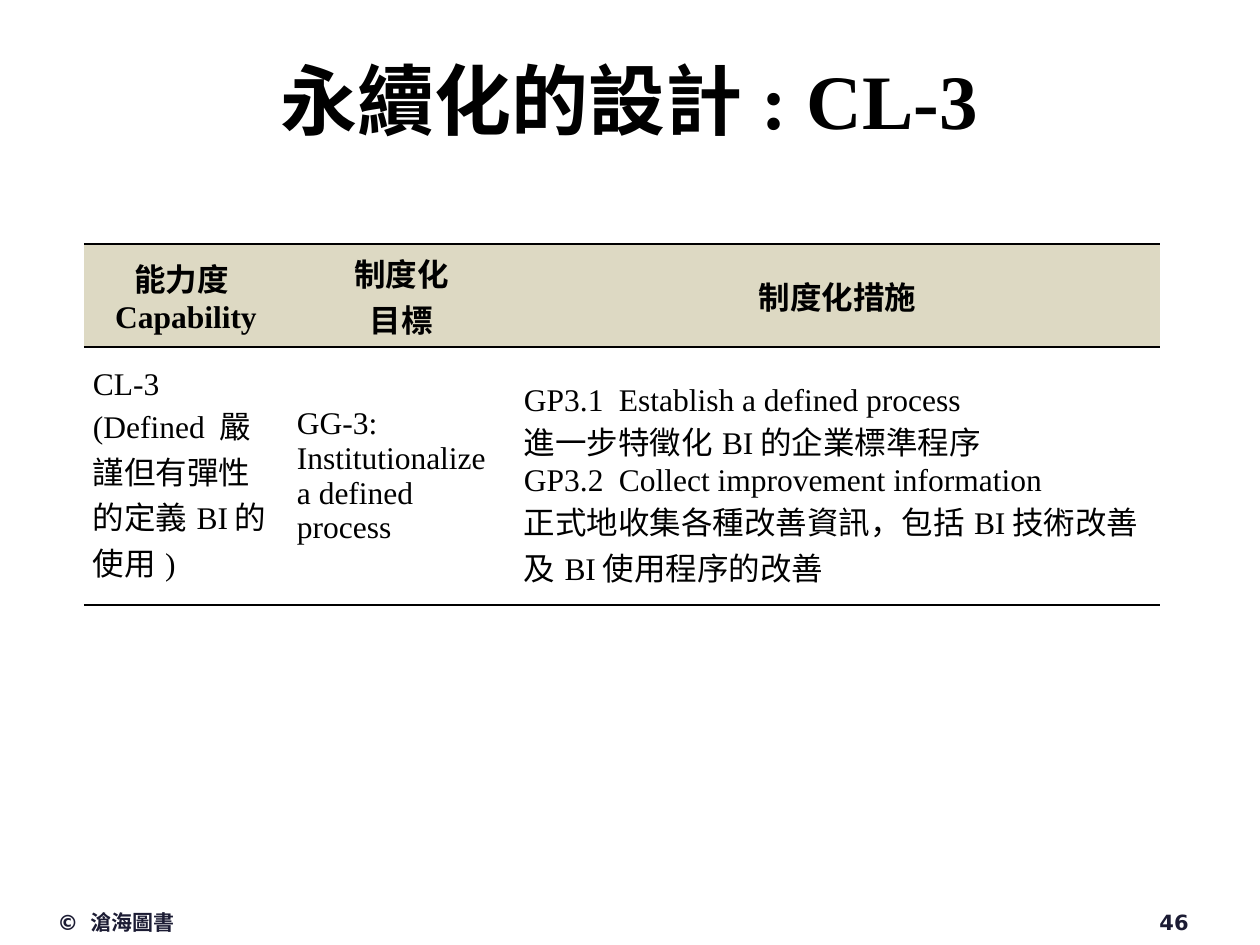
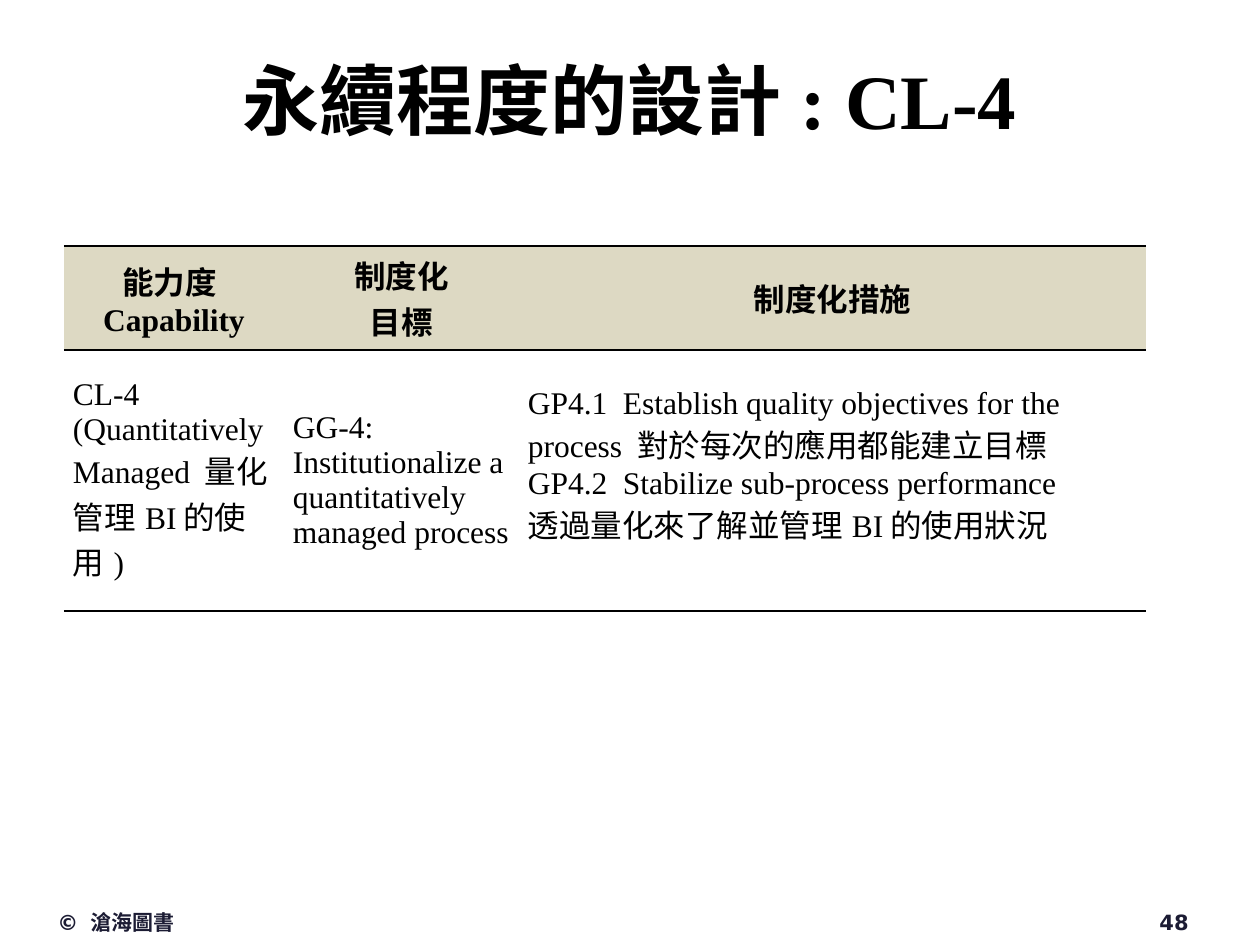
"""Build two slides that tabulate capability levels CL-3 and CL-4."""
from lxml import etree
from pptx import Presentation
from pptx import util as u
from pptx.dml.color import RGBColor
from pptx.enum import text
from pptx.oxml import ns

HUES = {"ink": "000000", "navy": "1C1C34", "sand": "DDD9C3", "paper": "FFFFFF"}
LEFT, MID, RIGHT = text.PP_ALIGN.LEFT, text.PP_ALIGN.CENTER, text.PP_ALIGN.RIGHT
SERIF, SANS = "Times New Roman", "DejaVu Sans"
TITLE = {"name": SERIF, "size": u.Pt(44), "bold": True}
FOOT = {"name": SANS, "size": u.Pt(12), "bold": True}
HEAD = {"name": SERIF, "size": u.Pt(18), "bold": True}
BODY = {"name": SERIF, "size": u.Pt(18), "bold": False}
HEADS = ["能力度Capability", "制度化\n目標", "制度化措施"]
TAB = 95
PAGES = [
    {"title": "永續化的設計: CL-3", "page": "46", "at": (84, 244),
     "cols": (204, 227, 645), "rows": (103, 258),
     "cells": ["CL-3\n(Defined 嚴謹但有彈性的定義BI的使用)",
               "GG-3: Institutionalize a defined process",
               "GP3.1\tEstablish a defined process\v進一步特徵化BI的企業標準程序\n"
               "GP3.2\tCollect improvement information\v"
               "正式地收集各種改善資訊，包括BI技術改善及BI使用程序的改善"]},
    {"title": "永續程度的設計: CL-4", "page": "48", "at": (64, 246),
     "cols": (220, 235, 627), "rows": (104, 261),
     "cells": ["CL-4 (Quantitatively Managed 量化管理BI的使用)",
               "GG-4: Institutionalize a quantitatively managed process",
               "GP4.1\tEstablish quality objectives for the process 對於每次的應用都能建立目標\n"
               "GP4.2\tStabilize sub-process performance\v透過量化來了解並管理BI的使用狀況"]},
]


def px(n):
    """Turn pixels into EMU."""
    return u.Emu(round(n * 914400 / 126))


def style(obj, vals):
    """Set each attribute named in a dict."""
    for key, val in vals.items():
        setattr(obj, key, val)


def write(frame, words, font, hue, align):
    """Fill a text frame with styled paragraphs."""
    frame.word_wrap = True
    frame.text = words
    for para in frame.paragraphs:
        para.alignment = align
        if "\t" in para.text:
            tabs = etree.SubElement(para._p.get_or_add_pPr(), ns.qn("a:tabLst"))
            etree.SubElement(tabs, ns.qn("a:tab"), pos=str(px(TAB)), algn="l")
        for run in para.runs:
            style(run.font, font)
            run.font.color.rgb = RGBColor.from_string(HUES[hue])


def label(slide, box, words, font, hue, align, anchor=text.MSO_ANCHOR.TOP):
    """Add a text box."""
    frame = slide.shapes.add_textbox(*map(px, box)).text_frame
    frame.vertical_anchor = anchor
    write(frame, words, font, hue, align)


def edge(cell):
    """Rule a cell above and below only."""
    props = cell._tc.get_or_add_tcPr()
    for spot, side in enumerate("LRTB"):
        line = etree.Element(ns.qn(f"a:ln{side}"), w=str(u.Pt(1)))
        if side in "LR":
            etree.SubElement(line, ns.qn("a:noFill"))
        else:
            fill = etree.SubElement(line, ns.qn("a:solidFill"))
            etree.SubElement(fill, ns.qn("a:srgbClr"), val=HUES["ink"])
        props.insert(spot, line)


def paint(cell, words, font, hue, align):
    """Fill, rule and write one table cell."""
    style(cell, {"margin_left": px(9), "margin_right": px(9), "margin_top": 0,
                 "margin_bottom": 0, "vertical_anchor": text.MSO_ANCHOR.MIDDLE})
    cell.fill.solid()
    cell.fill.fore_color.rgb = RGBColor.from_string(HUES[hue])
    edge(cell)
    write(cell.text_frame, words, font, "ink", align)


def grid(slide, page):
    """Add the capability table."""
    cols, rows = page["cols"], page["rows"]
    box = (*page["at"], sum(cols), sum(rows))
    table = slide.shapes.add_table(len(rows), len(cols), *map(px, box)).table
    style(table, {"first_row": False, "horz_banding": False})
    for col, wide in zip(table.columns, cols):
        col.width = px(wide)
    for row, high in zip(table.rows, rows):
        row.height = px(high)
    for n, (head, body) in enumerate(zip(HEADS, page["cells"])):
        paint(table.cell(0, n), head, HEAD, "sand", MID)
        paint(table.cell(1, n), body, BODY, "paper", LEFT)
    style(table.cell(1, len(cols) - 1),
          {"vertical_anchor": text.MSO_ANCHOR.TOP, "margin_top": px(36)})


def main():
    """Build and save the deck."""
    deck = Presentation()
    style(deck, {"slide_width": px(1260), "slide_height": px(945)})
    for page in PAGES:
        slide = deck.slides.add_slide(deck.slide_layouts[6])
        label(slide, (63, 42, 1133, 113), page["title"], TITLE, "ink", MID,
              text.MSO_ANCHOR.MIDDLE)
        label(slide, (45, 903, 347, 42), "© 滄海圖書", FOOT, "navy", LEFT)
        label(slide, (907, 903, 294, 42), page["page"], FOOT, "navy", RIGHT)
        grid(slide, page)
    deck.save("out.pptx")


if __name__ == "__main__":
    main()
